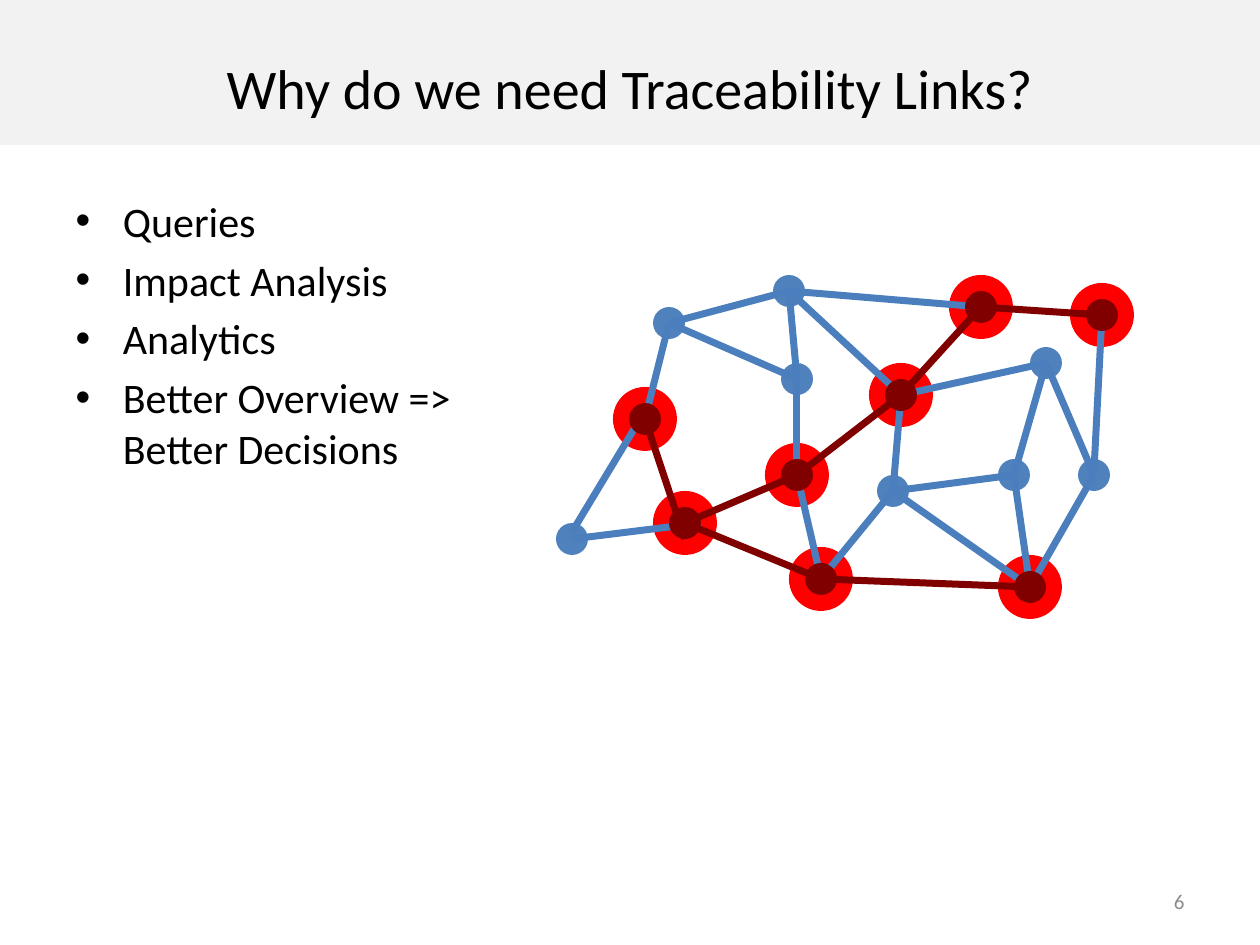
"""Build a slide on traceability links with a highlighted path through a network."""
from lxml.etree import SubElement
from pptx import Presentation
from pptx.dml.color import RGBColor
from pptx.enum.shapes import MSO_CONNECTOR, MSO_SHAPE
from pptx.enum.text import MSO_ANCHOR, MSO_AUTO_SIZE, PP_ALIGN
from pptx.oxml.ns import qn
from pptx.util import Pt

PX = 914400 / 126
COLORS = {name: RGBColor.from_string(value) for name, value in {
    "band": "F2F2F2", "text": "000000", "number": "8C8C8C", "halo": "FF0000",
    "node": "4F81BD", "link": "4B7EBC", "path": "800000",
}.items()}


def px(*values):
    return [round(v * PX) for v in values]


def add_filled(shapes, kind, x, y, w, h, color):
    sp = shapes.add_shape(kind, *px(x, y, w, h))
    sp.shadow.inherit = False
    sp.fill.solid()
    sp.fill.fore_color.rgb = COLORS[color]
    sp.line.fill.background()
    return sp


prs = Presentation()
prs.slide_width, prs.slide_height = px(1260, 945)
s = prs.slides.add_slide(prs.slide_layouts[1])
title, body = s.placeholders

band = add_filled(s.shapes, MSO_SHAPE.RECTANGLE, 0, 0, 1260, 145, "band")
title._element.addprevious(band._element)

number = s.shapes.add_textbox(*px(903, 876, 294, 50))
title.left, title.top, title.width, title.height = px(63, 38, 1134, 98)
body.left, body.top, body.width, body.height = px(63, 189, 462, 655)

bullets = ["Queries", "Impact Analysis", "Analytics", "Better Overview => Better Decisions"]
for sp, text, size, color, align, anchor in [
    (title, "Why do we need Traceability Links?", 32, "text", PP_ALIGN.CENTER, MSO_ANCHOR.MIDDLE),
    (body, "\n".join(bullets), 24, "text", PP_ALIGN.LEFT, MSO_ANCHOR.TOP),
    (number, "6", 12, "number", PP_ALIGN.RIGHT, MSO_ANCHOR.MIDDLE),
]:
    tf = sp.text_frame
    tf.text = text
    tf.word_wrap = True
    tf.auto_size = MSO_AUTO_SIZE.NONE
    tf.vertical_anchor = anchor
    for p in tf.paragraphs:
        p.alignment = align
        for r in p.runs:
            r.font.name = "Calibri"
            r.font.size = Pt(size)
            r.font.color.rgb = COLORS[color]

marked = {
    "A": (645, 419), "B": (685, 523), "C": (797, 475), "D": (821, 579),
    "E": (901, 395), "F": (981, 307), "G": (1102, 315), "H": (1030, 587),
}
plain = {
    "i": (572, 539), "j": (797, 379), "k": (669, 323), "l": (789, 291),
    "m": (893, 491), "n": (1046, 363), "o": (1014, 475), "p": (1094, 475),
}
points = {**marked, **plain}
links = {
    "link": "Ai kA lk kj mD CD jC Fl El lj mH pH oH on om mE nE np Gp Bi".split(),
    "path": "BD HD AB CB EC FE GF".split(),
}
end_shifts = {"Ai": (0, -8, 0, -7), "Bi": (16, 0, 0, 0), "AB": (0, 0, 0, 16), "Gp": (0, 0, 0, -4)}

network = s.shapes.add_group_shape().shapes
for nodes, size, color in [(marked, 64, "halo"), (plain, 32, "node")]:
    for x, y in nodes.values():
        add_filled(network, MSO_SHAPE.OVAL, x - size / 2, y - size / 2, size, size, color)

for color, pairs in links.items():
    for pair in pairs:
        start, end = pair
        ends = points[start] + points[end]
        shifted = [v + d for v, d in zip(ends, end_shifts.get(pair, (0, 0, 0, 0)))]
        line = network.add_connector(MSO_CONNECTOR.STRAIGHT, *px(*shifted))
        line.line.width = Pt(4)
        line.line.color.rgb = COLORS[color]
        SubElement(line._element.spPr, qn("a:effectLst"))

for x, y in marked.values():
    add_filled(network, MSO_SHAPE.OVAL, x - 16, y - 16, 32, 32, "path")

prs.save("out.pptx")
